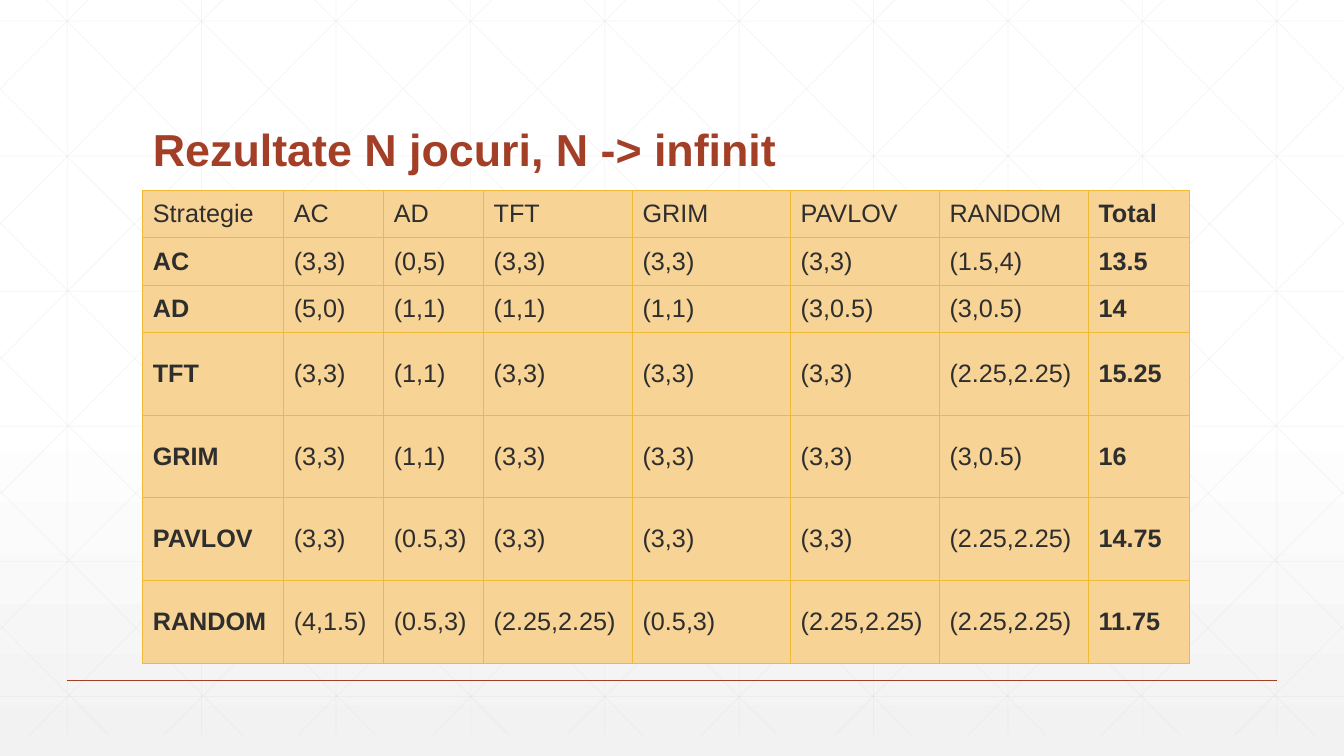
from lxml.etree import SubElement
from pptx import Presentation
from pptx.dml.color import RGBColor
from pptx.enum.shapes import MSO_CONNECTOR
from pptx.enum.text import MSO_ANCHOR, MSO_AUTO_SIZE, PP_ALIGN
from pptx.oxml import parse_xml
from pptx.oxml.ns import nsdecls, qn
from pptx.util import Pt

COLORS = {"accent": "A43F27", "text": "2D2E2D", "cell": "F8D396",
          "border": "F0BA34", "grid": "D9D9D9", "top": "FFFFFF", "bottom": "F2F2F2"}
WIDTH, HEIGHT = 960, 540
GRID_TOP, GRID_BOTTOM = -15, 525
COLUMNS = [100.7, 71.4, 71.4, 106.4, 112.9, 106.4, 106.4, 72.1]
ROWS = [33.8] * 3 + [59.1] * 4
RESULTS = [line.split() for line in """
Strategie AC AD TFT GRIM PAVLOV RANDOM Total
AC (3,3) (0,5) (3,3) (3,3) (3,3) (1.5,4) 13.5
AD (5,0) (1,1) (1,1) (1,1) (3,0.5) (3,0.5) 14
TFT (3,3) (1,1) (3,3) (3,3) (3,3) (2.25,2.25) 15.25
GRIM (3,3) (1,1) (3,3) (3,3) (3,3) (3,0.5) 16
PAVLOV (3,3) (0.5,3) (3,3) (3,3) (3,3) (2.25,2.25) 14.75
RANDOM (4,1.5) (0.5,3) (2.25,2.25) (0.5,3) (2.25,2.25) (2.25,2.25) 11.75
""".strip().splitlines()]


def rgb(name):
    """Return the named colour."""
    return RGBColor.from_string(COLORS[name])


def write(tf, text, size=18, color="text", bold=False, spacing=None):
    """Write one left-aligned formatted paragraph."""
    p = tf.paragraphs[0]
    p.alignment = PP_ALIGN.LEFT
    p.line_spacing = spacing
    r = p.add_run()
    r.text = text
    r.font.name, r.font.size, r.font.bold = "Arial", Pt(size), bold
    r.font.color.rgb = rgb(color)


class Deck:
    """Hold the presentation, its style and the current slide."""

    def __init__(self):
        """Open a presentation with one title slide."""
        self.prs = Presentation()
        self.prs.slide_width, self.prs.slide_height = Pt(WIDTH), Pt(HEIGHT)
        self.s = self.prs.slides.add_slide(self.prs.slide_layouts[5])

    def background(self):
        """Fade the background to grey in its lower half."""
        fill = self.s.background.fill
        fill.gradient()
        fill.gradient_angle = 270
        for stop, position, name in zip(fill.gradient_stops, (0.53, 1), ("top", "bottom")):
            stop.position, stop.color.rgb = position, rgb(name)

    def line(self, shapes, start, end, color, width, opacity=None):
        """Draw a straight line between two points."""
        sp = shapes.add_connector(MSO_CONNECTOR.STRAIGHT, *map(Pt, (*start, *end)))
        sp.line.color.rgb, sp.line.width = rgb(color), Pt(width)
        props = sp.element.spPr
        if opacity:
            clr = next(props.iter(qn("a:srgbClr")))
            SubElement(clr, qn("a:alpha"), val=str(opacity * 1000))
        SubElement(props, qn("a:effectLst"))

    def grid(self):
        """Draw the faint lattice of straight and mirrored diagonal lines."""
        lines = [((48 + 96 * i, GRID_TOP), (48 + 96 * i, GRID_BOTTOM)) for i in range(10)]
        lines += [((0, 15 + 96.5 * i), (WIDTH, 15 + 96.5 * i)) for i in range(6)]
        full_run = 537
        slope = (GRID_BOTTOM - GRID_TOP) / full_run
        diagonals = []
        for i in range(10):
            x = 18 + 96 * i
            run = min(full_run, WIDTH - x)
            diagonals.append(((x, GRID_TOP), (x + run, GRID_TOP + run * slope)))
        for i in range(5):
            x = 459 - 95.25 * i
            diagonals.append(((x, GRID_BOTTOM), (0, GRID_BOTTOM - x * slope)))
        mirrored = [((WIDTH - a, b), (WIDTH - c, d)) for (a, b), (c, d) in diagonals]
        group = self.s.shapes.add_group_shape()
        for start, end in lines + diagonals + mirrored:
            self.line(group.shapes, start, end, "grid", 0.5, 25)

    def title(self, text):
        """Place the title above the lattice."""
        sp = self.s.shapes.title
        sp.element.getparent().append(sp.element)
        sp.left, sp.top, sp.width, sp.height = map(Pt, (102, 39.6, 756, 90))
        tf = sp.text_frame
        tf.auto_size, tf.word_wrap = MSO_AUTO_SIZE.NONE, True
        tf.vertical_anchor = MSO_ANCHOR.BOTTOM
        write(tf, text, size=32, color="accent", bold=True, spacing=0.9)

    def cell(self, cell, text, bold):
        """Fill, outline and write one table cell."""
        cell.vertical_anchor = MSO_ANCHOR.MIDDLE
        write(cell.text_frame, text, bold=bold)
        props = cell._tc.get_or_add_tcPr()
        for side in ("lnL", "lnR", "lnT", "lnB"):
            props.append(parse_xml(
                f'<a:{side} {nsdecls("a")} w="{Pt(0.5)}"><a:solidFill>'
                f'<a:srgbClr val="{COLORS["border"]}"/></a:solidFill></a:{side}>'))
        cell.fill.solid()
        cell.fill.fore_color.rgb = rgb("cell")

    def table(self, rows):
        """Add the table, with bold row names and totals."""
        frame = self.s.shapes.add_table(len(rows), len(COLUMNS), Pt(102), Pt(136),
                                        Pt(sum(COLUMNS)), Pt(sum(ROWS)))
        table = frame.table
        for column, width in zip(table.columns, COLUMNS):
            column.width = Pt(width)
        for i, (row, height) in enumerate(zip(rows, ROWS)):
            table.rows[i].height = Pt(height)
            for j, text in enumerate(row):
                bold = j == len(row) - 1 or (j == 0 and i > 0)
                self.cell(table.cell(i, j), text, bold)


def main():
    """Build and save the slide."""
    deck = Deck()
    deck.background()
    deck.grid()
    deck.line(deck.s.shapes, (48, 486), (912, 486), "accent", 1)
    deck.title("Rezultate N jocuri, N -> infinit")
    deck.table(RESULTS)
    deck.prs.save("out.pptx")


if __name__ == "__main__":
    main()
